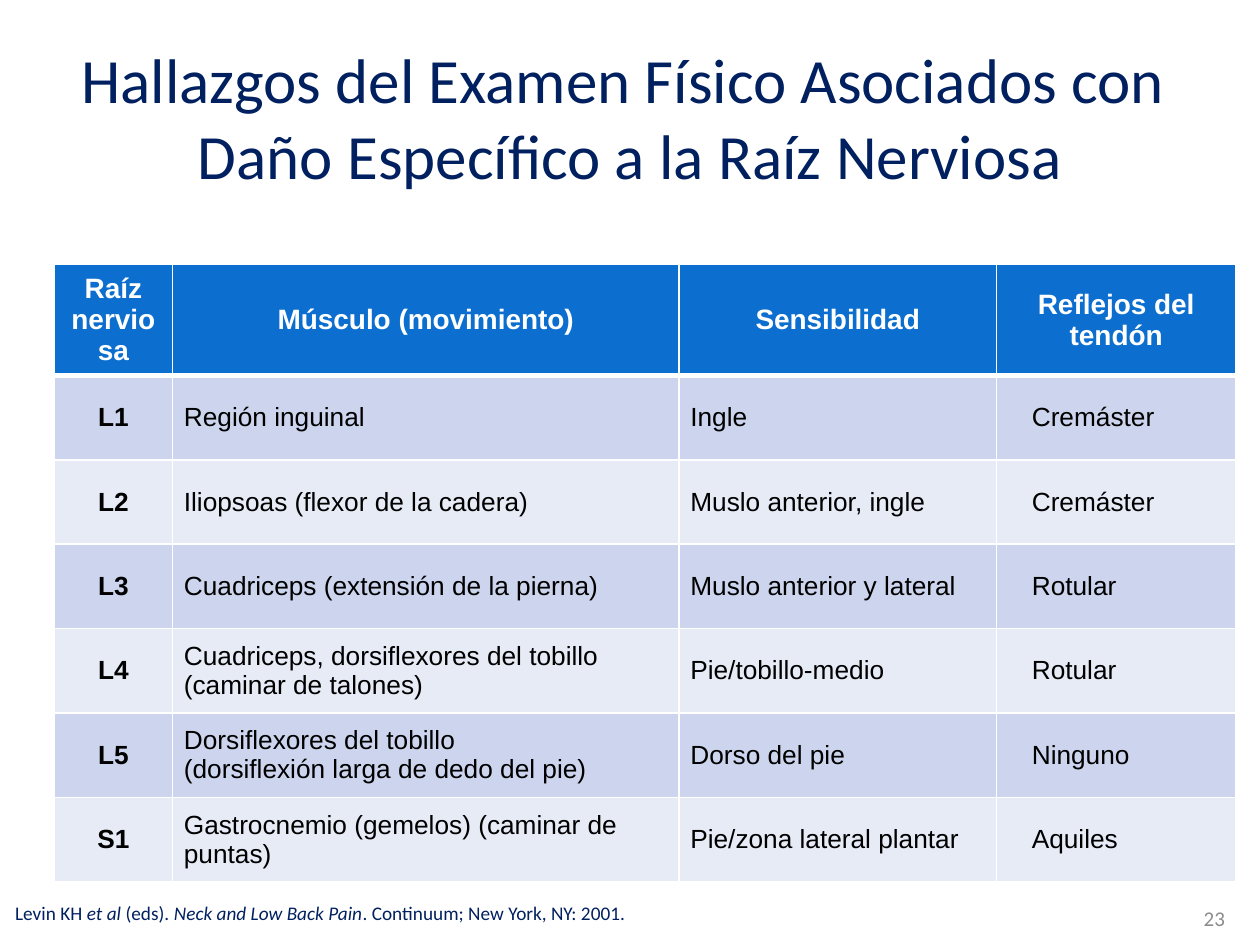
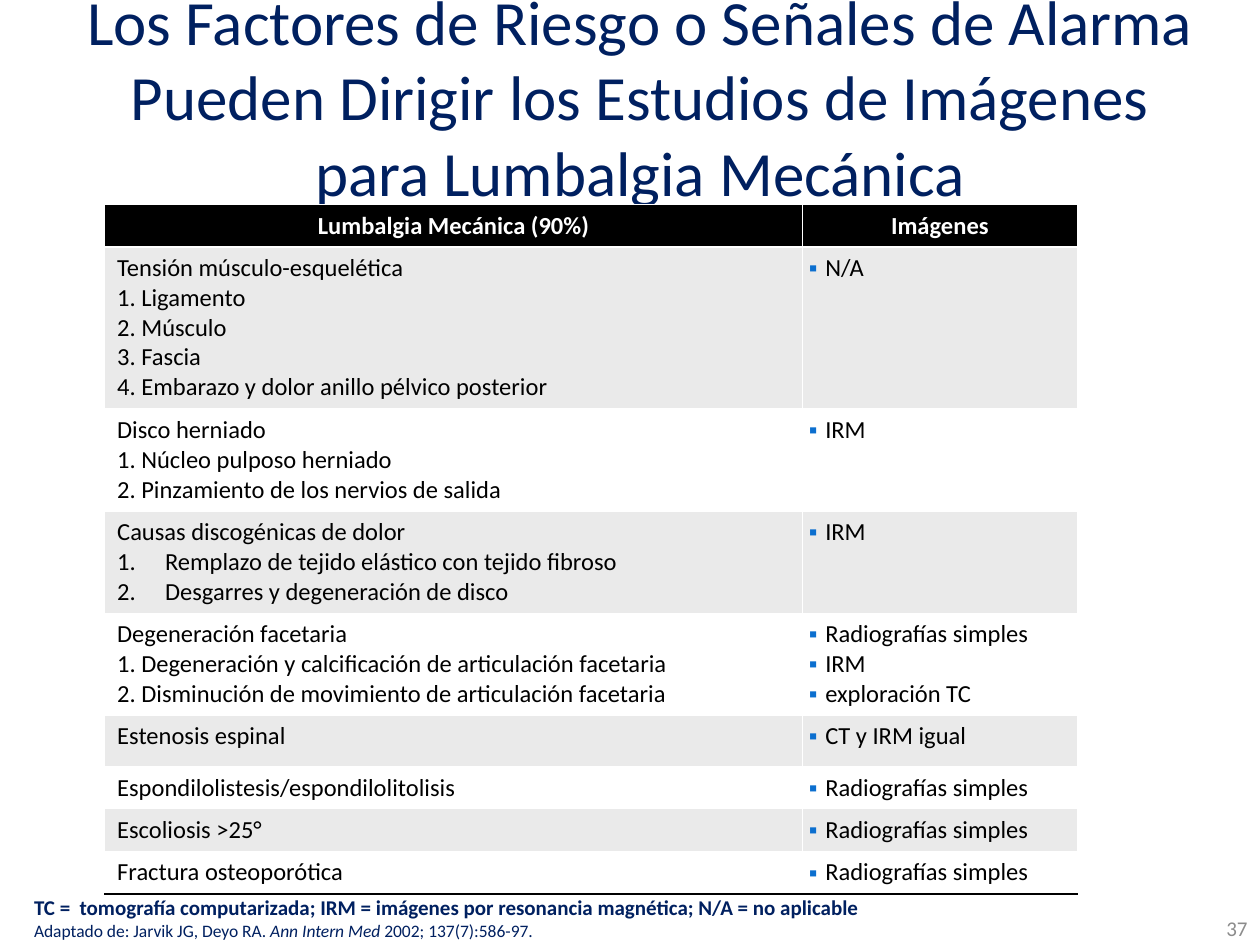
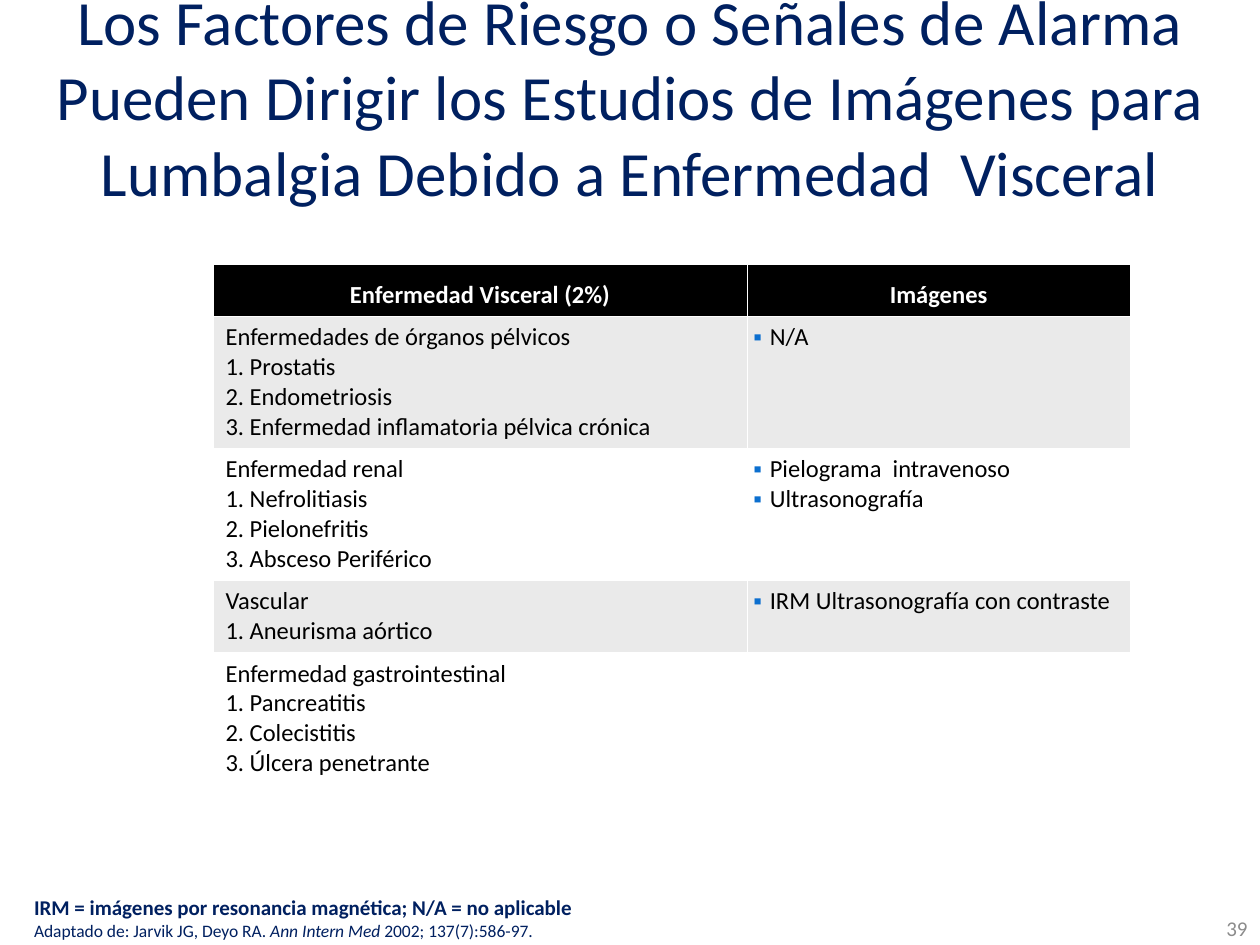
"""Build three slides on nerve root findings and imaging choices for low back pain."""
from copy import deepcopy

from lxml.etree import SubElement
from pptx import Presentation
from pptx.dml.color import RGBColor
from pptx.enum.text import MSO_ANCHOR, PP_ALIGN
from pptx.oxml.ns import qn
from pptx.util import Inches, Pt

NAVY = RGBColor(0x00, 0x20, 0x60)
BLUE = RGBColor(0x0C, 0x6F, 0xCF)
BLUE_BAND = RGBColor(0xCC, 0xD5, 0xED)
BLUE_PALE = RGBColor(0xE7, 0xEB, 0xF6)
GRAY = RGBColor(0x8C, 0x8C, 0x8C)
GRAY_BAND = RGBColor(0xEA, 0xEA, 0xEA)
BLACK = RGBColor(0x00, 0x00, 0x00)
WHITE = RGBColor(0xFF, 0xFF, 0xFF)

COLS, ROWS = 100, 75
LINE_ROWS, PAD_ROWS = 2.37, 1
LEFT, CENTER, RIGHT = PP_ALIGN.LEFT, PP_ALIGN.CENTER, PP_ALIGN.RIGHT
TOP, MIDDLE, BOTTOM = MSO_ANCHOR.TOP, MSO_ANCHOR.MIDDLE, MSO_ANCHOR.BOTTOM

TITLE = dict(name="Calibri", size=Pt(36), color=NAVY)
NUMBER = dict(name="Calibri", size=Pt(12), color=GRAY)
NOTE = dict(name="Calibri", size=Pt(10), color=NAVY)
KEY = NOTE | dict(size=Pt(12), bold=True)
ITALIC = dict(italic=True)
ROOT_HEAD = dict(name="Arial", size=Pt(16), bold=True, color=WHITE)
ROOT_BODY = dict(name="Arial", size=Pt(15), bold=False, color=BLACK)
IMAGE_HEAD = dict(name="Calibri", size=Pt(14), bold=True, color=WHITE)
IMAGE_BODY = IMAGE_HEAD | dict(bold=False, color=BLACK)

INDENTS = {"plain": (0, 0), "shift": (0.19, 0), "hang": (0.13, -0.13),
           "dot": (0.13, -0.13), "auto": (0.38, -0.38)}


def para(text, font, align=LEFT, kind="plain"):
    """Describe a paragraph; text is a string or a list of (text, font changes)."""
    return dict(runs=[(text, {})] if isinstance(text, str) else text,
                font=font, align=align, kind=kind)


def cell(paras, fill, anchor=TOP, margins=(0.1, 0.05)):
    """Describe a table cell."""
    return dict(paras=paras, fill=fill, anchor=anchor, margins=margins)


class Deck:
    """Hold the presentation, its grid and the current slide."""

    def __init__(self):
        """Start an empty presentation of 10 by 7.5 inches."""
        self.prs = Presentation()
        self.prs.slide_width, self.prs.slide_height = Inches(10), Inches(7.5)
        self.s = None

    def x(self, cols):
        """Turn grid columns into a length."""
        return int(self.prs.slide_width * cols / COLS)

    def y(self, rows):
        """Turn grid rows into a length."""
        return int(self.prs.slide_height * rows / ROWS)

    def box(self, left, top, width, height):
        """Turn a grid area into four lengths."""
        return self.x(left), self.y(top), self.x(width), self.y(height)

    def slide(self):
        """Add a blank slide and make it current."""
        self.s = self.prs.slides.add_slide(self.prs.slide_layouts[6])

    def bullet(self, p, kind):
        """Set the indent and the bullet of a paragraph."""
        pPr = p._p.get_or_add_pPr()
        left, first = INDENTS[kind]
        pPr.set("marL", str(Inches(left)))
        pPr.set("indent", str(Inches(first)))
        if kind == "dot":
            color = SubElement(pPr, qn("a:buClr"))
            SubElement(color, qn("a:srgbClr"), val=str(BLUE))
            SubElement(pPr, qn("a:buFont"), typeface="Arial")
            SubElement(pPr, qn("a:buChar"), char="▪")
        elif kind == "auto":
            SubElement(pPr, qn("a:buAutoNum"), type="arabicPeriod")

    def run(self, p, text, fmt):
        """Add a formatted run to a paragraph."""
        r = p.add_run()
        r.text = text
        for key, value in fmt.items():
            if key == "color":
                r.font.color.rgb = value
            else:
                setattr(r.font, key, value)
        return r

    def fill_text(self, tf, paras):
        """Fill a text frame with paragraphs."""
        for i, item in enumerate(paras):
            p = tf.add_paragraph() if i else tf.paragraphs[0]
            p.alignment = item["align"]
            self.bullet(p, item["kind"])
            for text, changes in item["runs"]:
                for n, line in enumerate(text.split("\n")):
                    if n:
                        p.add_line_break()
                        p._p[-1].append(deepcopy(r._r.rPr))
                    r = self.run(p, line, item["font"] | changes)

    def text(self, area, paras, anchor=MIDDLE, margins=(0.1, 0.05)):
        """Add a wrapped text box."""
        tf = self.s.shapes.add_textbox(*self.box(*area)).text_frame
        tf.word_wrap = True
        tf.vertical_anchor = anchor
        tf.margin_left = tf.margin_right = Inches(margins[0])
        tf.margin_top = tf.margin_bottom = Inches(margins[1])
        self.fill_text(tf, paras)

    def title(self, text, area):
        """Add the slide title."""
        self.text(area, [para(text, TITLE, CENTER)])

    def number(self, value, area=(79.2, 72.7, 20.8, 1.9)):
        """Add the slide number."""
        self.text(area, [para(str(value), NUMBER, RIGHT)])

    def footnote(self, paras, left=2.7, top=70.3):
        """Add the reference at the foot."""
        self.text((left, top, 83.8, 4.4), paras, BOTTOM, (0, 0))

    def borders(self, c, lines):
        """Set cell borders from a dict of side to colour and width."""
        tcPr = c._tc.get_or_add_tcPr()
        for side, (color, width) in lines.items():
            ln = SubElement(tcPr, qn(f"a:ln{side}"), w=str(Pt(width)))
            SubElement(SubElement(ln, qn("a:solidFill")), qn("a:srgbClr"), val=str(color))

    def table(self, left, top, widths, heights, rows, line, under_head=None, last=None):
        """Add a table whose cells carry their own fills and borders."""
        area = self.box(left, top, sum(widths), sum(heights))
        tbl = self.s.shapes.add_table(len(rows), len(widths), *area).table
        tbl.horz_banding = False
        for col, width in zip(tbl.columns, widths):
            col.width = self.x(width)
        for row, height in zip(tbl.rows, heights):
            row.height = self.y(height)
        edges = [line] * (len(rows) + 1)
        edges[1], edges[-1] = under_head or line, last or line
        for i, row in enumerate(rows):
            for j, item in enumerate(row):
                c = tbl.cell(i, j)
                self.borders(c, dict(L=line, R=line, T=edges[i], B=edges[i + 1]))
                c.fill.solid()
                c.fill.fore_color.rgb = item["fill"]
                c.vertical_anchor = item["anchor"]
                c.margin_left = c.margin_right = Inches(item["margins"][0])
                c.margin_top = c.margin_bottom = Inches(item["margins"][1])
                self.fill_text(c.text_frame, item["paras"])

    def root_table(self, heads, findings):
        """Add the table of findings by nerve root."""
        margins = (0.09, 0.04)
        rows = [[cell([para(h, ROOT_HEAD, CENTER)], BLUE, MIDDLE, margins) for h in heads]]
        for i, (root, muscle, feeling, reflex) in enumerate(findings):
            paras = (para(root, ROOT_BODY | dict(bold=True), CENTER), para(muscle, ROOT_BODY),
                     para(feeling, ROOT_BODY), para(reflex, ROOT_BODY, kind="shift"))
            fill = BLUE_PALE if i % 2 else BLUE_BAND
            rows.append([cell([p], fill, MIDDLE, margins) for p in paras])
        self.table(4.3, 21, (9.4, 40.2, 25.2, 19), [8.1] + [6.7] * len(findings), rows,
                   (WHITE, 1), under_head=(WHITE, 3))

    def image_table(self, left, top, widths, head_height, heads, causes, last=None):
        """Add the table of causes and the imaging for each."""
        rows = [[cell([para(h, IMAGE_HEAD, CENTER)], BLACK, BOTTOM) for h in heads]]
        heights = [head_height]
        for i, (name, items, images, kind, extra) in enumerate(causes):
            fill = WHITE if i % 2 else GRAY_BAND
            if kind == "hang":
                items = [f"{n}. {item}" for n, item in enumerate(items, 1)]
            listed = [para(item, IMAGE_BODY, kind=kind) for item in items]
            shown = [para(image, IMAGE_BODY, kind="dot") for image in images]
            rows.append([cell([para(name, IMAGE_BODY)] + listed, fill),
                         cell(shown, fill, margins=(0.05, 0.05))])
            heights.append(LINE_ROWS * (1 + len(items)) + PAD_ROWS + extra)
        self.table(left, top, widths, heights, rows, (WHITE, 0.75), last=last)


def cause(name, items=(), images=(), kind="hang", extra=0):
    """Describe one row of an imaging table."""
    return name, items, images, kind, extra


def reference(key):
    """Return the abbreviations and the reference of an imaging slide."""
    return [para(key, KEY),
            para([("Adaptado de: Jarvik JG, Deyo RA. ", {}), ("Ann Intern Med", ITALIC),
                  (" 2002; 137(7):586-97.", {})], NOTE)]


def main():
    """Build and save the slides."""
    deck = Deck()

    deck.slide()
    deck.title("Hallazgos del Examen Físico Asociados con  Daño Específico a la Raíz Nerviosa",
               (5, 3, 90, 12.5))
    deck.number(23, (74.9, 70.9, 23.3, 4))
    deck.footnote([para([("Levin KH ", {}), ("et al ", ITALIC), ("(eds). ", {}),
                         ("Neck and Low Back Pain", ITALIC),
                         (". Continuum; New York, NY: 2001.", {})],
                        NOTE | dict(size=Pt(11)))], 1.2, 69)
    deck.root_table(
        ("Raíz nerviosa", "Músculo (movimiento)", "Sensibilidad", "Reflejos del tendón"),
        [("L1", "Región inguinal", "Ingle", "Cremáster"),
         ("L2", "Iliopsoas (flexor de la cadera)", "Muslo anterior, ingle", "Cremáster"),
         ("L3", "Cuadriceps (extensión de la pierna)", "Muslo anterior y lateral", "Rotular"),
         ("L4", "Cuadriceps, dorsiflexores del tobillo (caminar de talones)",
          "Pie/tobillo-medio", "Rotular"),
         ("L5", "Dorsiflexores del tobillo \n(dorsiflexión larga de dedo del pie)",
          "Dorso del pie", "Ninguno"),
         ("S1", "Gastrocnemio (gemelos) (caminar de puntas)",
          "Pie/zona lateral plantar", "Aquiles")])

    risk = "Los Factores de Riesgo o Señales de Alarma Pueden Dirigir los Estudios de Imágenes para "
    plain_films = "Radiografías simples"

    deck.slide()
    deck.title(risk + "Lumbalgia Mecánica", (5.1, 2.1, 91.4, 11))
    deck.image_table(
        8.3, 16.2, (55.4, 21.8), 3.4, ("Lumbalgia Mecánica (90%)", "Imágenes"),
        [cause("Tensión músculo-esquelética",
               ["Ligamento", "Músculo", "Fascia", "Embarazo y dolor anillo pélvico posterior"],
               ["N/A"]),
         cause("Disco herniado",
               ["Núcleo pulposo herniado", "Pinzamiento de los nervios de salida"], ["IRM"]),
         cause("Causas discogénicas de dolor",
               ["Remplazo de tejido elástico con tejido fibroso",
                "Desgarres y degeneración de disco"], ["IRM"], kind="auto"),
         cause("Degeneración facetaria",
               ["Degeneración y calcificación de articulación facetaria",
                "Disminución de movimiento de articulación facetaria"],
               [plain_films, "IRM", "exploración TC"]),
         cause("Estenosis espinal", images=["CT y IRM igual"], extra=0.7),
         cause("Espondilolistesis/espondilolitolisis", images=[plain_films]),
         cause("Escoliosis >25°", images=[plain_films]),
         cause("Fractura osteoporótica", images=[plain_films])],
        last=(BLACK, 1.5))
    deck.footnote(reference("TC =  tomografía computarizada; IRM = imágenes por resonancia "
                            "magnética; N/A = no aplicable"))
    deck.number(37)

    deck.slide()
    deck.title(risk + "Lumbalgia Debido a Enfermedad  Visceral", (0, 2.1, 100, 11))
    deck.image_table(
        16.9, 21, (42.4, 30.4), 4.1, ("Enfermedad Visceral (2%)", "Imágenes"),
        [cause("Enfermedades de órganos pélvicos",
               ["Prostatis", "Endometriosis", "Enfermedad inflamatoria pélvica crónica"],
               ["N/A"]),
         cause("Enfermedad renal", ["Nefrolitiasis", "Pielonefritis", "Absceso Periférico"],
               ["Pielograma  intravenoso", "Ultrasonografía"]),
         cause("Vascular", ["Aneurisma aórtico"], ["IRM Ultrasonografía con contraste"]),
         cause("Enfermedad gastrointestinal",
               ["Pancreatitis", "Colecistitis", "Úlcera penetrante"])])
    deck.number(39)
    deck.footnote(reference("IRM = imágenes por resonancia magnética; N/A = no aplicable"))

    deck.prs.save("out.pptx")


if __name__ == "__main__":
    main()
